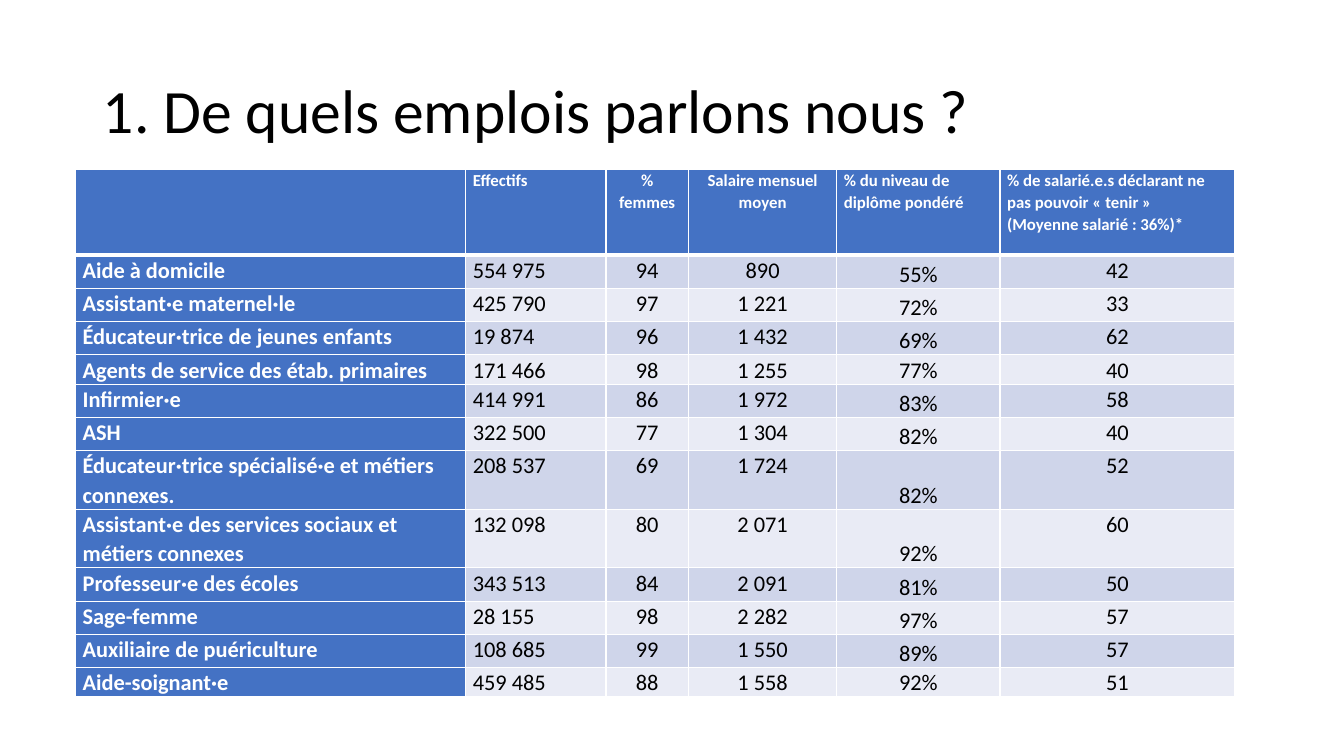
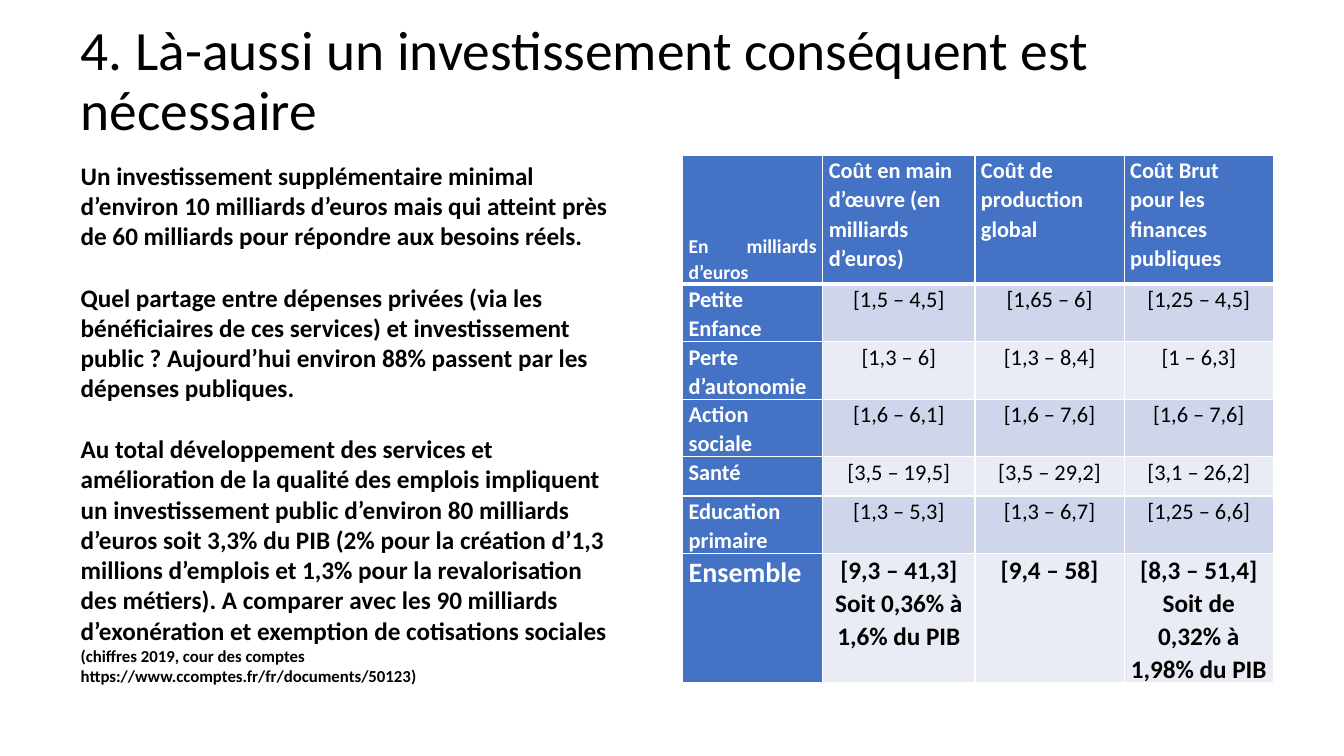
from lxml.etree import SubElement
from pptx import Presentation
from pptx.dml.color import RGBColor
from pptx.enum.text import MSO_ANCHOR, MSO_AUTO_SIZE, PP_ALIGN
from pptx.oxml import parse_xml
from pptx.oxml.ns import nsdecls, qn
from pptx.util import Inches, Pt

COLORS = {"text": "000000", "white": "FFFFFF", "head": "4472C4",
          "band": "CFD5EA", "light": "E9EBF5"}
FONT = "Calibri"
LEFT, CENTER, JUSTIFY = PP_ALIGN.LEFT, PP_ALIGN.CENTER, PP_ALIGN.JUSTIFY
TOP, MIDDLE, BOTTOM = MSO_ANCHOR.TOP, MSO_ANCHOR.MIDDLE, MSO_ANCHOR.BOTTOM


class Deck:
    """House style plus the slide being built."""

    def __init__(self):
        self.prs = Presentation()
        self.prs.slide_width, self.prs.slide_height = Inches(13.33), Inches(7.5)
        self.s = None

    def slide(self, layout):
        self.s = self.prs.slides.add_slide(self.prs.slide_layouts[layout])

    def place(self, sp, at):
        for name, value in zip(("left", "top", "width", "height"), at):
            setattr(sp, name, Inches(value))

    def run(self, p, text, size, color="text", bold=False):
        r = p.add_run()
        r.text = text
        for name, value in {"name": FONT, "size": Pt(size), "bold": bold}.items():
            setattr(r.font, name, value)
        r.font.color.rgb = RGBColor.from_string(COLORS[color])

    def title(self, text, at, size):
        sp = self.s.shapes.title
        self.place(sp, at)
        tf = sp.text_frame
        for name, value in {"word_wrap": True, "vertical_anchor": MIDDLE,
                            "auto_size": MSO_AUTO_SIZE.NONE}.items():
            setattr(tf, name, value)
        p = tf.paragraphs[0]
        p.alignment, p.line_spacing = LEFT, 0.9
        self.run(p, text, size)

    def body(self, paragraphs, at, gap):
        """Each paragraph is a list of (text, size) runs."""
        sp = self.s.placeholders[1]
        self.place(sp, at)
        tf = sp.text_frame
        tf.auto_size = MSO_AUTO_SIZE.SHAPE_TO_FIT_TEXT
        for i, runs in enumerate(paragraphs):
            p = tf.add_paragraph() if i else tf.paragraphs[0]
            p.alignment, p.line_spacing = LEFT, 1.0
            p.space_before = Pt(gap if i else 0)
            pPr = p._p.get_or_add_pPr()
            pPr.set("marL", "0")
            pPr.set("indent", "0")
            SubElement(pPr, qn("a:buNone"))
            for text, size in runs:
                self.run(p, text, size, bold=True)

    def borders(self, cell, row):
        """White rules, thicker under the header row."""
        widths = {"L": 1, "R": 1, "T": 3 if row == 1 else 1, "B": 3 if row == 0 else 1}
        tcPr = cell._tc.get_or_add_tcPr()
        for i, (side, width) in enumerate(widths.items()):
            tcPr.insert(i, parse_xml(
                f'<a:ln{side} {nsdecls("a")} w="{Pt(width)}"><a:solidFill>'
                f'<a:srgbClr val="{COLORS["white"]}"/></a:solidFill></a:ln{side}>'))

    def table(self, rows, at, cols, heights, inset, cell_style):
        """cell_style(row, col) gives size, alignment, anchor and boldness."""
        frame = self.s.shapes.add_table(len(rows), len(cols), *map(Inches, at))
        tbl = frame.table
        for col, width in zip(tbl.columns, cols):
            col.width = Inches(width)
        for row, height in zip(tbl.rows, heights):
            row.height = Inches(height)
        for i, row in enumerate(rows):
            for j, text in enumerate(row):
                cell = tbl.cell(i, j)
                heading = i == 0 or j == 0
                size, align, anchor, bold = cell_style(i, j)
                fill = "head" if heading else "band" if i % 2 else "light"
                cell.fill.solid()
                cell.fill.fore_color.rgb = RGBColor.from_string(COLORS[fill])
                for name, value in {"margin_left": Inches(inset), "margin_right": Inches(inset),
                                    "margin_top": 0, "margin_bottom": 0,
                                    "vertical_anchor": anchor}.items():
                    setattr(cell, name, value)
                self.borders(cell, i)
                tf = cell.text_frame
                for k, line in enumerate(text.split("\n") if text else []):
                    p = tf.add_paragraph() if k else tf.paragraphs[0]
                    p.alignment, p.line_spacing = align, 1.07
                    self.run(p, line, size, "white" if heading else "text", heading or bold)


JOBS = [
    ("", "Effectifs", "% femmes", "Salaire mensuel moyen", "% du niveau de diplôme pondéré",
     "% de salarié.e.s déclarant ne pas pouvoir « tenir »\n(Moyenne salarié : 36%)*"),
    ("Aide à domicile", "554 975", "94", "890", "55%", "42"),
    ("Assistant·e maternel·le", "425 790", "97", "1 221", "72%", "33"),
    ("Éducateur·trice de jeunes enfants", "19 874", "96", "1 432", "69%", "62"),
    ("Agents de service des étab. primaires", "171 466", "98", "1 255", "77%", "40"),
    ("Infirmier·e", "414 991", "86", "1 972", "83%", "58"),
    ("ASH", "322 500", "77", "1 304", "82%", "40"),
    ("Éducateur·trice spécialisé·e et métiers connexes.", "208 537", "69", "1 724", "82%", "52"),
    ("Assistant·e des services sociaux et métiers connexes", "132 098", "80", "2 071", "92%", "60"),
    ("Professeur·e des écoles", "343 513", "84", "2 091", "81%", "50"),
    ("Sage-femme", "28 155", "98", "2 282", "97%", "57"),
    ("Auxiliaire de puériculture", "108 685", "99", "1 550", "89%", "57"),
    ("Aide-soignant·e", "459 485", "88", "1 558", "92%", "51"),
]

COSTS = [
    ("En milliards d’euros", "Coût en main d’œuvre (en milliards d’euros)",
     "Coût de production global", "Coût Brut pour les finances publiques"),
    ("Petite Enfance", "[1,5 – 4,5]", "[1,65 – 6]", "[1,25 – 4,5]"),
    ("Perte d’autonomie", "[1,3 – 6]", "[1,3 – 8,4]", "[1 – 6,3]"),
    ("Action sociale", "[1,6 – 6,1]", "[1,6 – 7,6]", "[1,6 – 7,6]"),
    ("Santé", "[3,5 – 19,5]", "[3,5 – 29,2]", "[3,1 – 26,2]"),
    ("Education primaire", "[1,3 – 5,3]", "[1,3 – 6,7]", "[1,25 – 6,6]"),
    ("Ensemble", "[9,3 – 41,3]\nSoit 0,36% à 1,6% du PIB", "[9,4 – 58]",
     "[8,3 – 51,4]\nSoit de 0,32% à 1,98% du PIB"),
]

INVESTMENT = [
    [("Un investissement supplémentaire minimal d’environ 10 milliards d’euros mais qui "
      "atteint près de 60 milliards pour répondre aux besoins réels.", 18)],
    [("Quel partage entre dépenses privées (via les bénéficiaires de ces services) et "
      "investissement public ? Aujourd’hui environ 88% passent par les dépenses publiques.", 18)],
    [("Au total développement des services et amélioration de la qualité des emplois "
      "impliquent un investissement public d’environ 80 milliards d’euros soit 3,3% du PIB "
      "(2% pour la création d’1,3 millions d’emplois et 1,3% pour la revalorisation des "
      "métiers). A comparer avec les 90 milliards d’exonération et exemption de cotisations "
      "sociales ", 18),
     ("(chiffres 2019, cour des comptes https://www.ccomptes.fr/fr/documents/50123)", 12)],
]


def jobs_style(i, j):
    centered = j in (2, 3) or (i > 0 and j > 3)
    anchor = BOTTOM if i > 0 and j == 4 else TOP
    return 16 if i else 12, CENTER if centered else LEFT, anchor, False


def costs_style(i, j):
    total = i == len(COSTS) - 1
    if i == 0:
        return (16, LEFT, TOP, True) if j else (14, JUSTIFY, BOTTOM, True)
    if j == 0:
        return 20 if total else 16, JUSTIFY if i < 5 else LEFT, TOP, True
    return 18 if total else 16, CENTER, TOP, total


def main():
    deck = Deck()

    # Slide 1: the jobs concerned
    deck.slide(5)
    deck.title("1. De quels emplois parlons nous ?", (0.92, 0.4, 11.5, 1.45), 44)
    heights = [0.85] + [0.33] * 3 + [0.26] + [0.33] * 2 + [0.54] * 2 + [0.33] * 3 + [0.27]
    deck.table(JOBS, (0.75, 1.68, 11.5, 5.11), (3.87, 1.39, 0.82, 1.47, 1.62, 2.33),
               heights, 0.07, jobs_style)

    # Slide 2: the investment needed
    deck.slide(1)
    deck.title("4. Là-aussi un investissement conséquent est nécessaire",
               (0.7, 0.21, 11.93, 1.21), 39.6)
    deck.table(COSTS, (6.77, 1.54, 5.86, 5.16), (1.39, 1.51, 1.48, 1.48),
               [1.28] + [0.39] * 4 + [0.49, 1.2], 0.06, costs_style)
    deck.body(INVESTMENT, (0.7, 1.54, 5.54, 5.65), gap=22)

    deck.prs.save("out.pptx")


if __name__ == "__main__":
    main()
